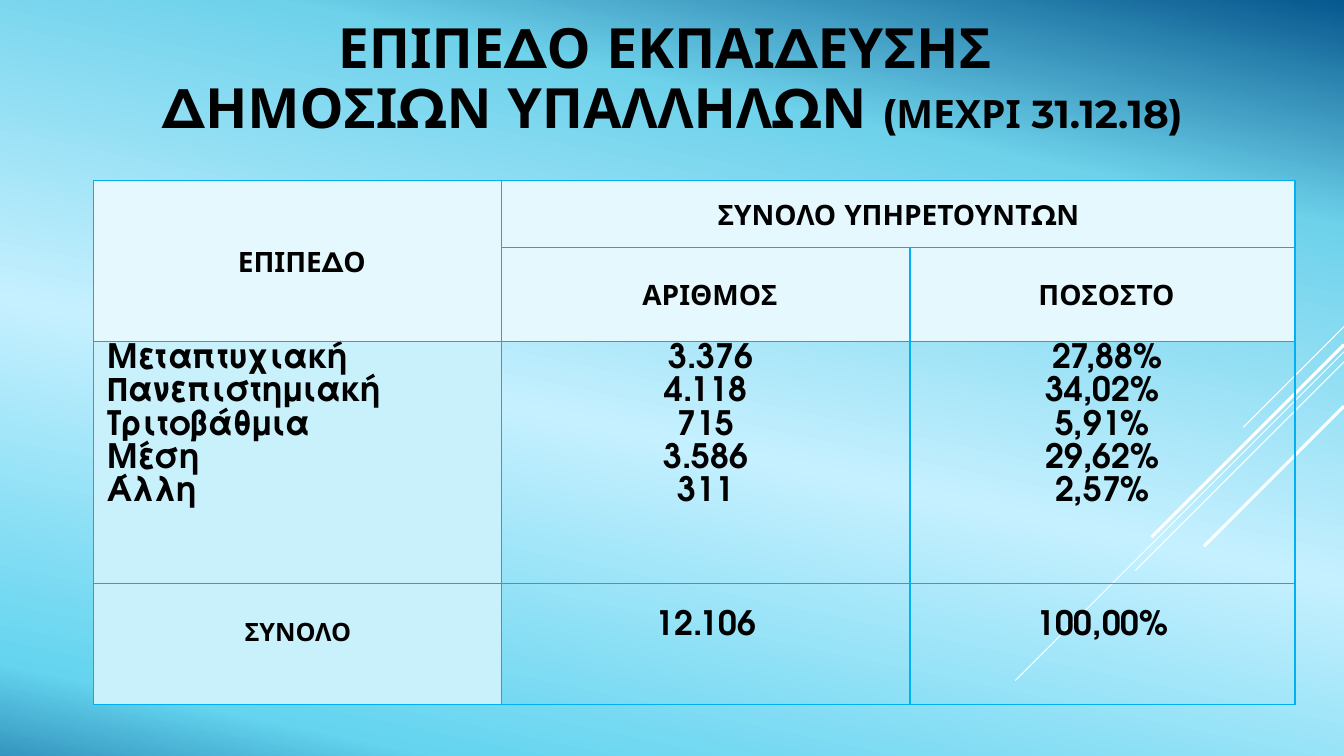
import pptx
import pptx.dml.color
import pptx.enum.shapes
import pptx.enum.text
import pptx.oxml.ns
import pptx.util
from lxml import etree

Pt = pptx.util.Pt
ALIGN = pptx.enum.text.PP_ALIGN
ANCHOR = pptx.enum.text.MSO_ANCHOR
qn = pptx.oxml.ns.qn

BLACK, WHITE, BORDER = "000000", "FFFFFF", "00B0F0"
HEADER_FILL, LEVEL_FILL = "E4F8FD", "C8F1FB"
SANS, ROUND = "Montserrat", "TeX Gyre Adventor"
GRADIENT = [(0, "06588E"), (22, "6ED2EB"), (56, "C5F0FF"), (91, "64D4EF"), (100, "3596BF")]
STREAKS = [(233.3, 72, 0.75), (251.3, 234.7, 0.75), (258.5, 149, 0.75),
           (246.2, 137.5, 2.25), (290.2, 100, 2.25)]
LEVELS = ["Μεταπτυχιακή", "Πανεπιστημιακή", "Τριτοβάθμια", "Μέση", "Άλλη"]
COUNTS = [" 3.376", "4.118", "715", "3.586", "311"]
SHARES = [" 27,88%", "34,02%", "5,91%", "29,62%", "2,57%"]


def color(value):
    return pptx.dml.color.RGBColor.from_string(value)


def add_span(para, text, size, name):
    span = para.add_run()
    span.text = text
    for key, value in {"size": Pt(size), "name": name, "bold": True}.items():
        setattr(span.font, key, value)
    span.font.color.rgb = color(BLACK)


def paint_background(page):
    fill = page.background.fill
    fill.gradient()
    fill.gradient_angle = 258
    stops = page.element.xpath(".//a:gsLst")[0]
    for stop in list(stops):
        stops.remove(stop)
    for position, value in GRADIENT:
        stop = etree.SubElement(stops, qn("a:gs"), pos=str(position * 1000))
        etree.SubElement(stop, qn("a:srgbClr"), val=value)


def add_streaks(page, right):
    for top, reach, width in STREAKS:
        line = page.shapes.add_connector(
            pptx.enum.shapes.MSO_CONNECTOR.STRAIGHT,
            Pt(right), Pt(top), Pt(right - reach), Pt(top + reach))
        line.line.color.rgb = color(WHITE)
        line.line.width = Pt(width)
        etree.SubElement(line.element.spPr, qn("a:effectLst"))


def add_title(page, left, top, width, height):
    box = page.shapes.add_textbox(Pt(left), Pt(top), Pt(width), Pt(height))
    frame = box.text_frame
    for key, value in {"word_wrap": True, "vertical_anchor": ANCHOR.TOP,
                       "margin_top": Pt(3.6)}.items():
        setattr(frame, key, value)
    para = frame.paragraphs[0]
    para.alignment = ALIGN.CENTER
    para.line_spacing = 0.9
    add_span(para, "ΕΠΙΠΕΔΟ ΕΚΠΑΙΔΕΥΣΗΣ ", 39.6, SANS)
    para.add_line_break()
    add_span(para, "ΔΗΜΟΣΙΩΝ ΥΠΑΛΛΗΛΩΝ ", 39.6, SANS)
    add_span(para, "(ΜΕΧΡΙ 31.12.18)", 27.9, SANS)


def style_cell(cell, fill):
    properties = cell._tc.get_or_add_tcPr()
    for side in ("lnL", "lnR", "lnT", "lnB"):
        edge = etree.SubElement(properties, qn("a:" + side), w=str(Pt(1)))
        solid = etree.SubElement(edge, qn("a:solidFill"))
        etree.SubElement(solid, qn("a:srgbClr"), val=BORDER)
    if fill:
        cell.fill.solid()
        cell.fill.fore_color.rgb = color(fill)
    else:
        cell.fill.background()


def write_cell(cell, lines, size, name, align=ALIGN.CENTER, anchor=ANCHOR.TOP,
               left=3.6, top=0):
    for key, value in {"margin_left": Pt(left), "margin_right": Pt(3.6),
                       "margin_top": Pt(top), "margin_bottom": 0,
                       "vertical_anchor": anchor}.items():
        setattr(cell, key, value)
    frame = cell.text_frame
    for index, text in enumerate(lines):
        para = frame.add_paragraph() if index else frame.paragraphs[0]
        para.alignment = align
        para.line_spacing = 1.07
        add_span(para, text, size, name)


def add_education_table(page, left, top, widths, heights):
    table = page.shapes.add_table(
        len(heights), len(widths), Pt(left), Pt(top),
        Pt(sum(widths)), Pt(sum(heights))).table
    table.first_row = table.horz_banding = False
    for column, width in zip(table.columns, widths):
        column.width = Pt(width)
    for row, height in zip(table.rows, heights):
        row.height = Pt(height)
    for row in range(len(heights)):
        for column in range(len(widths)):
            fill = HEADER_FILL if row < 2 else None if column else LEVEL_FILL
            style_cell(table.cell(row, column), fill)
    table.cell(0, 0).merge(table.cell(1, 0))
    table.cell(0, 1).merge(table.cell(0, 2))
    for row, column, text in [(0, 0, " ΕΠΙΠΕΔΟ"), (0, 1, "ΣΥΝΟΛΟ ΥΠΗΡΕΤΟΥΝΤΩΝ"),
                              (1, 1, " ΑΡΙΘΜΟΣ"), (1, 2, " ΠΟΣΟΣΤΟ")]:
        write_cell(table.cell(row, column), [text], 20, SANS, anchor=ANCHOR.MIDDLE)
    write_cell(table.cell(2, 0), LEVELS, 24, ROUND, align=ALIGN.LEFT, left=10)
    write_cell(table.cell(3, 0), ["ΣΥΝΟΛΟ"], 18, SANS, top=22)
    for column, values, total in [(1, COUNTS, "12.106"), (2, SHARES, "100,00%")]:
        write_cell(table.cell(2, column), values, 24, ROUND)
        write_cell(table.cell(3, column), [total], 24, ROUND, top=18)


def main():
    deck = pptx.Presentation()
    deck.slide_width, deck.slide_height = Pt(960), Pt(540)
    page = deck.slides.add_slide(deck.slide_layouts[6])
    paint_background(page)
    add_streaks(page, 960)
    add_title(page, 49, 11.5, 863, 137)
    add_education_table(page, 67, 129, [291.5, 291.5, 275], [48, 67, 173, 86.5])
    deck.save("out.pptx")


if __name__ == "__main__":
    main()
